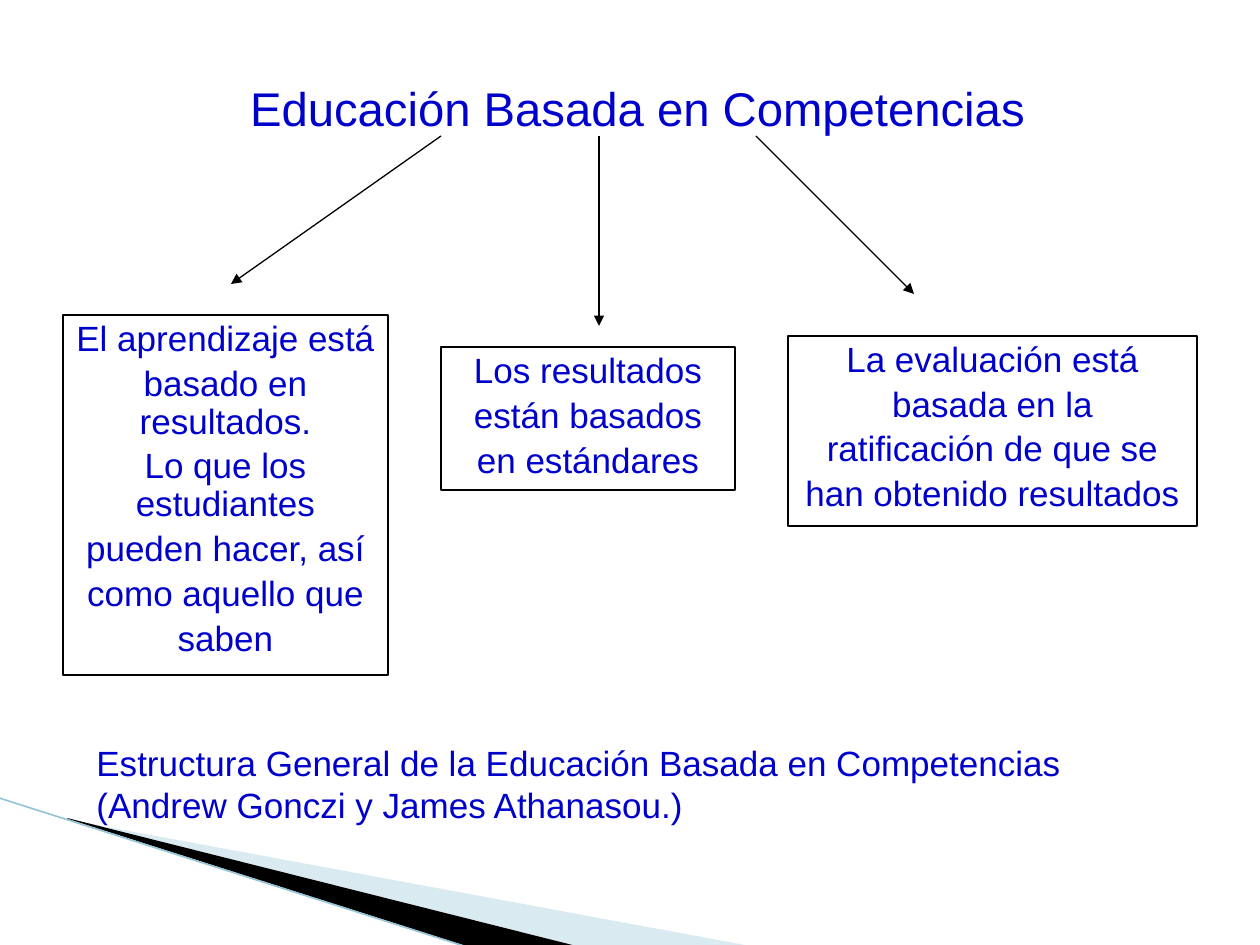
from dataclasses import dataclass

import pptx
import pptx.dml.color
import pptx.enum.shapes
import pptx.enum.text
import pptx.oxml.ns
import pptx.util
from lxml import etree

PX = 914400 / 126  # EMU in one px, 126 px to the inch
FONT = "Arial"
COLORS = {
    "text": "0000CC",
    "line": "000000",
    "wedge_light": "A0CBDC",
    "wedge_dark": "000000",
    "edge": "97C5D8",
}
CENTER = pptx.enum.text.PP_ALIGN.CENTER
LEFT = pptx.enum.text.PP_ALIGN.LEFT


@dataclass
class TextBlock:
    left: int
    top: int
    width: int
    height: int
    lines: list[str]
    size: int = 20
    align: int = CENTER
    spacing: float = 1.0
    framed: bool = False


@dataclass
class Line:
    start: tuple[int, int]
    end: tuple[int, int]
    color: str = "line"
    width: float = 0.75
    arrow: bool = True


@dataclass
class Wedge:
    points: list[tuple[int, int]]
    color: str
    opacity: int = 100


TITLE = TextBlock(95, 73, 1070, 84, ["Educación Basada en Competencias"], size=27)
PILLARS = [
    TextBlock(63, 315, 325, 360, [
        "El aprendizaje está", "basado en resultados.", "Lo que los estudiantes",
        "pueden hacer, así", "como aquello que", "saben",
    ], spacing=0.9, framed=True),
    TextBlock(441, 347, 294, 143, [
        "Los resultados", "están basados", "en estándares",
    ], spacing=0.9, framed=True),
    TextBlock(788, 336, 409, 190, [
        "La evaluación está", "basada en la", "ratificación de que se",
        "han obtenido resultados",
    ], spacing=0.9, framed=True),
]
SOURCE = TextBlock(84, 735, 1125, 97, [
    "Estructura General de la Educación Basada en Competencias "
    "(Andrew Gonczi y James Athanasou.)",
], align=LEFT)
ARROWS = [
    Line((441, 136), (231, 284)),
    Line((599, 136), (599, 326)),
    Line((756, 136), (914, 294)),
]
WEDGES = [
    Wedge([(69, 820), (750, 946), (575, 946), (69, 819)], "wedge_light", 40),
    Wedge([(67, 818), (576, 946), (469, 947), (68, 819)], "wedge_dark"),
]
EDGE = Line((-1, 798), (467, 947), color="edge", width=0.95, arrow=False)


def emu(px: int) -> int:
    return round(px * PX)


def rgb(name: str) -> pptx.dml.color.RGBColor:
    return pptx.dml.color.RGBColor.from_string(COLORS[name])


def add_child(parent, tag: str, **attributes: str):
    return etree.SubElement(parent, pptx.oxml.ns.qn(tag), **attributes)


def draw_wedge(page, wedge: Wedge) -> None:
    builder = page.shapes.build_freeform(*wedge.points[0], scale=PX)
    builder.add_line_segments(wedge.points[1:], close=True)
    shape = builder.convert_to_shape()
    shape.shadow.inherit = False
    shape.fill.solid()
    shape.fill.fore_color.rgb = rgb(wedge.color)
    shape.line.fill.background()
    if wedge.opacity < 100:
        color = shape.fill._xPr.find(".//" + pptx.oxml.ns.qn("a:srgbClr"))
        add_child(color, "a:alpha", val=str(wedge.opacity * 1000))


def draw_line(page, line: Line) -> None:
    connector = page.shapes.add_connector(
        pptx.enum.shapes.MSO_CONNECTOR.STRAIGHT,
        *map(emu, line.start), *map(emu, line.end))
    connector.line.color.rgb = rgb(line.color)
    connector.line.width = pptx.util.Pt(line.width)
    if line.arrow:
        add_child(connector.line._get_or_add_ln(), "a:tailEnd", type="triangle")
    add_child(connector._element.spPr, "a:effectLst")


def draw_text(page, block: TextBlock):
    place = [emu(n) for n in (block.left, block.top, block.width, block.height)]
    if block.framed:
        box = page.shapes.add_shape(
            pptx.enum.shapes.MSO_SHAPE.RECTANGLE, *place)
        box.shadow.inherit = False
        box.fill.background()
        box.line.color.rgb = rgb("line")
        box.line.width = pptx.util.Pt(0.75)
    else:
        box = page.shapes.add_textbox(*place)
    frame = box.text_frame
    frame.word_wrap = True
    frame.vertical_anchor = pptx.enum.text.MSO_ANCHOR.TOP
    frame.text = "\n".join(block.lines)
    for index, para in enumerate(frame.paragraphs):
        para.alignment = block.align
        para.line_spacing = block.spacing
        if index:
            para.space_before = pptx.util.Pt(block.size * 0.2)
        for span in para.runs:
            span.font.name = FONT
            span.font.size = pptx.util.Pt(block.size)
            span.font.color.rgb = rgb("text")
    return box


def main() -> None:
    deck = pptx.Presentation()
    deck.slide_width = emu(1260)
    deck.slide_height = emu(945)
    page = deck.slides.add_slide(deck.slide_layouts[6])

    # Corner decoration
    for wedge in WEDGES:
        draw_wedge(page, wedge)
    draw_line(page, EDGE)

    # Title, with a hanging indent
    title = draw_text(page, TITLE)
    indents = title.text_frame.paragraphs[0]._p.get_or_add_pPr()
    indents.set("marL", str(emu(50)))
    indents.set("indent", str(emu(-35)))

    # Three pillars, the source and the arrows
    for block in [*PILLARS, SOURCE]:
        draw_text(page, block)
    for arrow in ARROWS:
        draw_line(page, arrow)

    deck.save("out.pptx")


if __name__ == "__main__":
    main()
